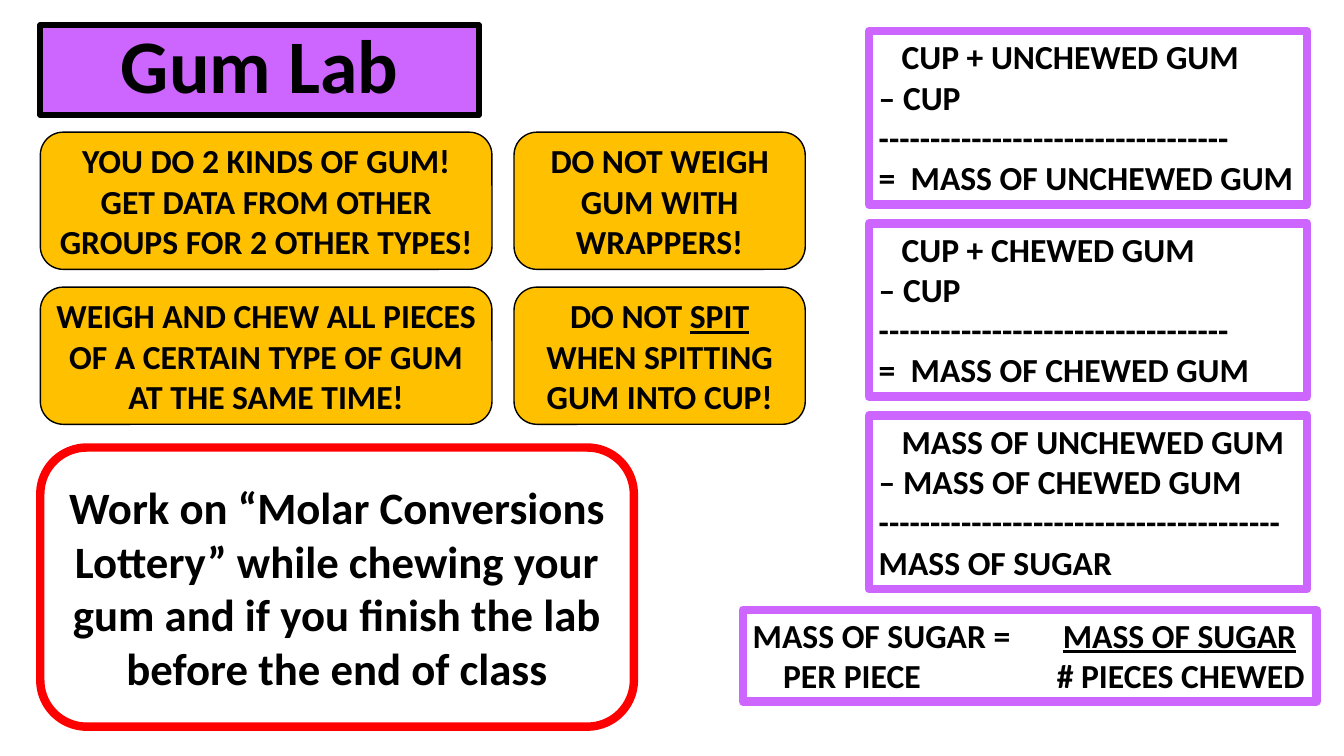
import pptx
import pptx.util
import pptx.dml.color
import pptx.enum.shapes
import pptx.enum.text
import lxml.etree

Pt = pptx.util.Pt
RGBColor = pptx.dml.color.RGBColor
KIND = pptx.enum.shapes.MSO_SHAPE
ANCHOR = pptx.enum.text.MSO_ANCHOR
ALIGN = pptx.enum.text.PP_ALIGN

BLACK = RGBColor(0x00, 0x00, 0x00)
WHITE = RGBColor(0xFF, 0xFF, 0xFF)
PURPLE = RGBColor(0xCC, 0x66, 0xFF)
GOLD = RGBColor(0xFF, 0xC0, 0x00)
RED = RGBColor(0xFF, 0x00, 0x00)

presentation = pptx.Presentation()
presentation.slide_width = Pt(960)
presentation.slide_height = Pt(540)
slide = presentation.slides.add_slide(presentation.slide_layouts[6])


def add_box(kind, bounds, fill, line, line_width, lines, size=24,
            align=ALIGN.CENTER, anchor=ANCHOR.MIDDLE, margins=(5, 3, 5, 3)):
    """Add a filled box; words between underscores are underlined."""
    shape = slide.shapes.add_shape(kind, *[Pt(value) for value in bounds])
    shape.shadow.inherit = False
    shape.fill.solid()
    shape.fill.fore_color.rgb = fill
    shape.line.color.rgb = line
    shape.line.width = Pt(line_width)
    frame = shape.text_frame
    frame.word_wrap = True
    frame.vertical_anchor = anchor
    frame.margin_left, frame.margin_top, frame.margin_right, frame.margin_bottom = [
        Pt(margin) for margin in margins]
    for number, line_text in enumerate(lines):
        paragraph = frame.add_paragraph() if number else frame.paragraphs[0]
        paragraph.alignment = align
        paragraph.font.name = "Calibri"
        paragraph.font.size = Pt(size)
        paragraph.font.bold = True
        paragraph.font.color.rgb = BLACK
        for position, piece in enumerate(line_text.split("_")):
            if piece:
                run = paragraph.add_run()
                run.text = piece
                if position % 2:
                    run.font.underline = True
    return shape


def set_tabs(paragraph, stops):
    properties = paragraph._p.get_or_add_pPr()
    namespace = "{http://schemas.openxmlformats.org/drawingml/2006/main}"
    tab_list = lxml.etree.Element(namespace + "tabLst")
    for stop in stops:
        lxml.etree.SubElement(tab_list, namespace + "tab", pos=str(Pt(stop)), algn="l")
    properties.find(namespace + "defRPr").addprevious(tab_list)


title = add_box(KIND.RECTANGLE, (28.8, 18, 313.2, 64), PURPLE, BLACK, 4.5, ["Gum Lab"],
                size=54, anchor=ANCHOR.BOTTOM, margins=(7.2, 3.6, 7.2, 3.6))
title.text_frame.paragraphs[0].line_spacing = 0.9

# Rules of the lab: two columns by two rows
RULE_COLUMNS = [(28.8, 322.6), (367.2, 208)]
RULES = [
    [(KIND.FLOWCHART_ALTERNATE_PROCESS,
      "YOU DO 2 KINDS OF GUM! GET DATA FROM OTHER GROUPS FOR 2 OTHER TYPES!"),
     (KIND.ROUNDED_RECTANGLE, "DO NOT WEIGH GUM WITH WRAPPERS!")],
    [(KIND.ROUNDED_RECTANGLE,
      "WEIGH AND CHEW ALL PIECES OF A CERTAIN TYPE OF GUM AT THE SAME TIME!"),
     (KIND.ROUNDED_RECTANGLE, "DO NOT _SPIT_ WHEN SPITTING GUM INTO CUP!")],
]
for row, rules in enumerate(RULES):
    for (left, width), (kind, rule) in zip(RULE_COLUMNS, rules):
        add_box(kind, (left, 94.4 + row * 110.7, width, 98), GOLD, BLACK, 1, [rule])

add_box(KIND.FLOWCHART_ALTERNATE_PROCESS, (28.8, 319.7, 424, 199.4), WHITE, RED, 6,
        ["Work on “Molar Conversions Lottery” while chewing your gum "
         "and if you finish the lab before the end of class"], size=32)

# Calculations: each line comes with its tab stops
TERM, RESULT = [16.3], [22.8]
CALCULATIONS = [
    ((620.6, 22.3, 313.2, 123.8),
     [("\tCUP + UNCHEWED GUM", TERM), ("– CUP", []), ("-" * 34, []),
      ("=\tMASS OF UNCHEWED GUM", RESULT)]),
    ((620.6, 159.6, 313.2, 123.8),
     [("\tCUP + CHEWED GUM", TERM), ("– CUP", []), ("-" * 34, []),
      ("=\tMASS OF CHEWED GUM", RESULT)]),
    ((620.6, 296.9, 313.2, 123.8),
     [("\tMASS OF UNCHEWED GUM", TERM), ("– MASS OF CHEWED GUM", []), ("-" * 39, []),
      ("MASS OF SUGAR", [])]),
    ((530.6, 435.6, 409.7, 65.5),
     [("MASS OF SUGAR =\t_MASS OF SUGAR_", [221.5]),
      ("\tPER PIECE\t# PIECES CHEWED", [21.7, 217.2])]),
]
for bounds, lines in CALCULATIONS:
    box = add_box(KIND.RECTANGLE, bounds, WHITE, PURPLE, 6, [text for text, stops in lines],
                  align=ALIGN.LEFT, anchor=ANCHOR.TOP, margins=(7.2, 3.6, 0, 3.6))
    for paragraph, (text, stops) in zip(box.text_frame.paragraphs, lines):
        if stops:
            set_tabs(paragraph, stops)

presentation.save("out.pptx")
